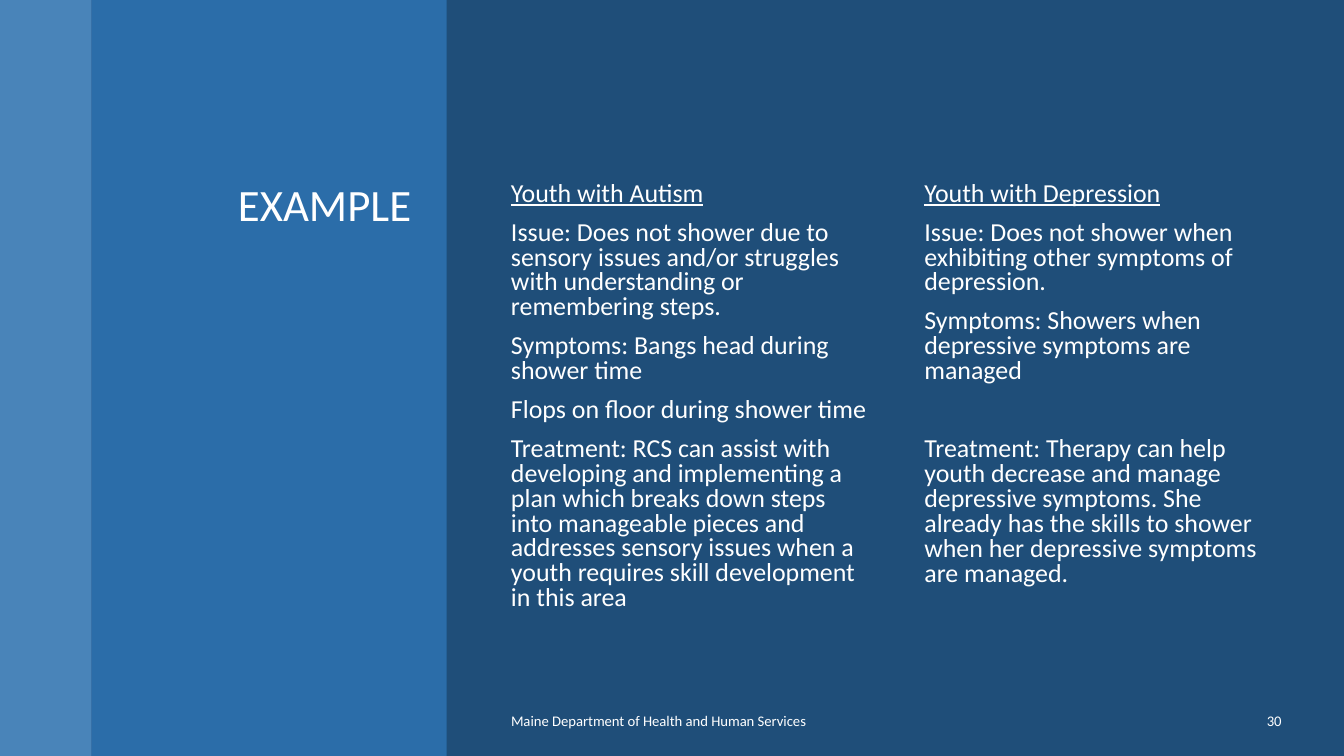
from lxml import etree
from pptx import Presentation
from pptx.dml.color import RGBColor
from pptx.enum.shapes import MSO_SHAPE
from pptx.enum.text import MSO_ANCHOR, MSO_AUTO_SIZE, PP_ALIGN
from pptx.oxml.ns import qn
from pptx.util import Inches, Pt

RECT = MSO_SHAPE.RECTANGLE
TOP, MIDDLE = MSO_ANCHOR.TOP, MSO_ANCHOR.MIDDLE
LEFT, RIGHT = PP_ALIGN.LEFT, PP_ALIGN.RIGHT
NO_FIT = MSO_AUTO_SIZE.NONE

COLORS = {"background": "1F4E79", "edge": "5B9BD5", "panel": "2E75B6", "text": "FFFFFF"}
FONT = "Calibri"
BODY_SIZE, FOOTER_SIZE = 18.5, 10.5
BODY_GAP, TREATMENT_GAP = 10, 38

TITLE = "EXAMPLE"
BANDS = [("edge", 0, 0.91, 70), ("panel", 0.91, 3.52, 80)]
COLUMNS = [
    [
        "Youth with Autism",
        "Issue: Does not shower due to sensory issues and/or struggles with "
        "understanding or remembering steps.",
        "Symptoms: Bangs head during shower time",
        "Flops on floor during shower time",
        "Treatment: RCS can assist with developing and implementing a plan which "
        "breaks down steps into manageable pieces and addresses sensory issues "
        "when a youth requires skill development in this area",
    ],
    [
        "Youth with Depression",
        "Issue: Does not shower when exhibiting other symptoms of depression.",
        "Symptoms: Showers when depressive symptoms are managed",
        "Treatment: Therapy can help youth decrease and manage depressive symptoms. "
        "She already has the skills to shower when her depressive symptoms are managed.",
    ],
]
FOOTERS = [
    ("Maine Department of Health and Human Services", 4.97, 6.22, LEFT),
    ("30", 11.32, 1.49, RIGHT),
]
COLUMN_LEFT, COLUMN_STEP, COLUMN_WIDTH = 4.97, 4.1, 3.74
BODY_TOP, BODY_HEIGHT = 1.76, 4.92


def rgb(name):
    return RGBColor.from_string(COLORS[name])


def write(shape, lines, size, anchor=TOP, align=LEFT, spacing=1.0):
    tf = shape.text_frame
    tf.text = "\n".join(lines)
    tf.word_wrap = True
    tf.auto_size = NO_FIT
    tf.vertical_anchor = anchor
    for p in tf.paragraphs:
        p.alignment = align
        p.line_spacing = spacing
        for r in p.runs:
            r.font.name = FONT
            r.font.size = Pt(size)
            r.font.color.rgb = rgb("text")
    return tf


def add_text(s, box, *args, **kwargs):
    return write(s.shapes.add_textbox(*map(Inches, box)), *args, **kwargs)


def add_band(s, color, left, width, opacity):
    sp = s.shapes.add_shape(RECT, Inches(left), 0, Inches(width), Inches(7.5))
    sp.shadow.inherit = False
    sp.line.fill.background()
    sp.fill.solid()
    sp.fill.fore_color.rgb = rgb(color)
    fill = sp.fill._xPr.find(qn("a:solidFill"))
    etree.SubElement(fill[0], qn("a:alpha"), val=str(opacity * 1000))


def main():
    prs = Presentation()
    prs.slide_width, prs.slide_height = Inches(13.33), Inches(7.5)
    s = prs.slides.add_slide(prs.slide_layouts[5])
    s.background.fill.solid()
    s.background.fill.fore_color.rgb = rgb("background")

    for band in BANDS:
        add_band(s, *band)

    title = s.shapes.title
    title.left, title.top = Inches(1.09), Inches(BODY_TOP)
    title.width, title.height = Inches(3.09), Inches(BODY_HEIGHT)
    write(title, [TITLE], 32, align=RIGHT, spacing=0.9)
    s.shapes._spTree.append(title._element)

    for i, lines in enumerate(COLUMNS):
        box = (COLUMN_LEFT + i * COLUMN_STEP, BODY_TOP, COLUMN_WIDTH, BODY_HEIGHT)
        tf = add_text(s, box, lines, BODY_SIZE, spacing=0.8)
        for p in tf.paragraphs:
            p.space_before = Pt(BODY_GAP)
        tf.paragraphs[0].runs[0].font.underline = True
    tf.paragraphs[-1].space_before = Pt(TREATMENT_GAP)

    for text, left, width, align in FOOTERS:
        add_text(s, (left, 6.95, width, 0.4), [text], FOOTER_SIZE, MIDDLE, align)

    prs.save("out.pptx")


if __name__ == "__main__":
    main()
